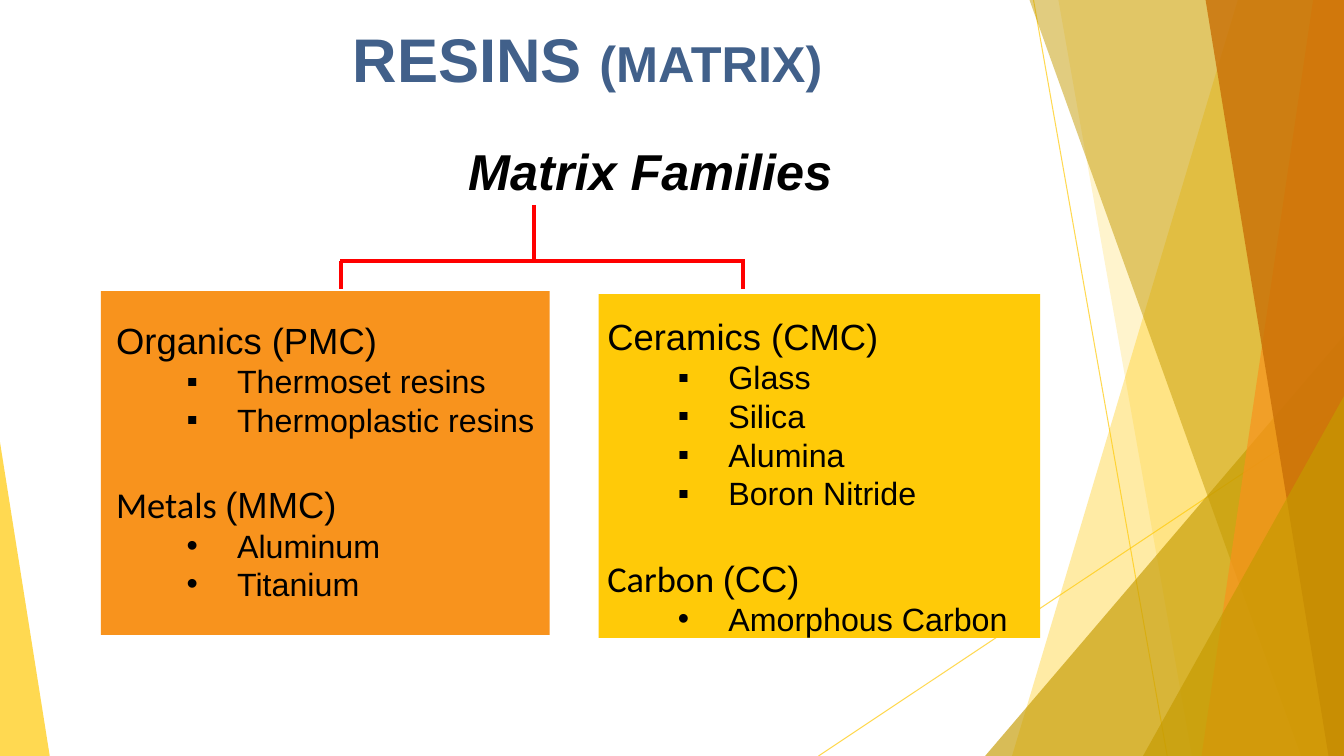
from lxml import etree
from pptx import Presentation
from pptx.dml.color import RGBColor
from pptx.enum.shapes import MSO_CONNECTOR, MSO_SHAPE
from pptx.enum.text import MSO_ANCHOR, MSO_AUTO_SIZE, PP_ALIGN
from pptx.oxml.ns import qn
from pptx.util import Inches, Pt

WIDTH, HEIGHT = Inches(13.33), Inches(7.5)
STRAIGHT = MSO_CONNECTOR.STRAIGHT
RECTANGLE = MSO_SHAPE.RECTANGLE
TRIANGLE = MSO_SHAPE.ISOSCELES_TRIANGLE
TOP, CENTER = MSO_ANCHOR.TOP, PP_ALIGN.CENTER
NO_FIT = MSO_AUTO_SIZE.NONE

YELLOW = RGBColor(0xFF, 0xCA, 0x08)
GOLD = RGBColor(0xC5, 0x9A, 0x00)
ORANGE = RGBColor(0xF8, 0x93, 0x1D)
BROWN = RGBColor(0xC9, 0x6F, 0x06)
RED = RGBColor(0xFF, 0x00, 0x00)
BLUE = RGBColor(0x41, 0x60, 0x8A)
BLACK = RGBColor(0x00, 0x00, 0x00)

HEAD_SIZE, ITEM_SIZE = 26, 23
FAMILY_GAP = Pt(31)

# family, font of its name, abbreviation, bullet, members
LEFT_FAMILIES = [
    ("Organics ", "Arial", "(PMC)", "▪", ["Thermoset resins", "Thermoplastic resins"]),
    ("Metals ", "Calibri", "(MMC)", "•", ["Aluminum", "Titanium"]),
]
RIGHT_FAMILIES = [
    ("Ceramics ", "Arial", "(CMC)", "▪", ["Glass", "Silica", "Alumina", "Boron Nitride"]),
    ("Carbon ", "Calibri", "(CC)", "•", ["Amorphous Carbon"]),
]


def x(percent):
    return round(WIDTH * percent / 100)


def y(percent):
    return round(HEIGHT * percent / 100)


def box(left, top, width, height):
    """Turn percentages of the slide into a position and size."""
    return x(left), y(top), x(width), y(height)


def set_alpha(color_parent, percent):
    color = color_parent.find(".//" + qn("a:srgbClr"))
    etree.SubElement(color, qn("a:alpha")).set("val", str(percent * 1000))


def paint(sp, color, alpha=100):
    sp.shadow.inherit = False
    sp.fill.solid()
    sp.fill.fore_color.rgb = color
    sp.line.fill.background()
    if alpha < 100:
        set_alpha(sp._element.spPr, alpha)


def add_line(slide, start, end, color, width, alpha=100):
    line = slide.shapes.add_connector(
        STRAIGHT, x(start[0]), y(start[1]), x(end[0]), y(end[1]))
    line.line.color.rgb = color
    line.line.width = Pt(width)
    if alpha < 100:
        set_alpha(line._element.spPr, alpha)
    etree.SubElement(line._element.spPr, qn("a:effectLst"))


def add_band(slide, top_x, bottom_x, color, alpha):
    """Fill from a slanted left edge to the right side of the slide."""
    builder = slide.shapes.build_freeform(x(top_x), 0)
    builder.add_line_segments([(WIDTH, 0), (WIDTH, HEIGHT), (x(bottom_x), HEIGHT)])
    paint(builder.convert_to_shape(), color, alpha)


def add_corner(slide, left, top, width, apex, color, alpha):
    """Stand a right triangle on the bottom edge; apex 0 is left, 1 is right."""
    sp = slide.shapes.add_shape(TRIANGLE, *box(left, top, width, 100 - top))
    sp.adjustments[0] = apex
    paint(sp, color, alpha)


def add_run(p, text, size, font="Arial", color=BLACK, bold=False, italic=False):
    r = p.add_run()
    r.text = text
    r.font.size = Pt(size)
    r.font.name = font
    r.font.color.rgb = color
    r.font.bold = bold
    r.font.italic = italic


def set_indent(p, level, left, first):
    p.level = level
    pPr = p._p.get_or_add_pPr()
    pPr.set("marL", str(Inches(left)))
    pPr.set("indent", str(Inches(first)))
    return pPr


def add_bullet(pPr, char):
    color = etree.SubElement(pPr, qn("a:buClr"))
    etree.SubElement(color, qn("a:srgbClr")).set("val", str(BLACK))
    etree.SubElement(pPr, qn("a:buFont")).set("typeface", "Arial")
    etree.SubElement(pPr, qn("a:buChar")).set("char", char)


def add_text_box(slide, left, top, width, height):
    tf = slide.shapes.add_textbox(*box(left, top, width, height)).text_frame
    tf.word_wrap = True
    return tf


def add_families(slide, left, top, families):
    tf = add_text_box(slide, left, top, 35.25, 45.3)
    for i, (name, font, short, bullet, members) in enumerate(families):
        p = tf.add_paragraph() if i else tf.paragraphs[0]
        set_indent(p, 0, 0.3, 0)
        if i:
            p.space_before = FAMILY_GAP
        add_run(p, name, HEAD_SIZE, font)
        add_run(p, short, HEAD_SIZE)
        for member in members:
            p = tf.add_paragraph()
            add_bullet(set_indent(p, 1, 1.5, -0.5), bullet)
            add_run(p, member, ITEM_SIZE)


def add_panel(slide, left, top, width, color):
    paint(slide.shapes.add_shape(RECTANGLE, *box(left, top, width, 45.5)), color)


def add_decoration(slide):
    add_line(slide, (76.9, 0), (86.85, 100), YELLOW, 0.75, 70)
    add_line(slide, (100, 53.7), (60.9, 100), YELLOW, 0.75, 70)
    add_band(slide, 92.1, 75.3, YELLOW, 36)
    add_band(slide, 78.75, 88.7, YELLOW, 20)
    add_corner(slide, 73.3, 44.4, 26.7, 1, GOLD, 66)
    add_band(slide, 76.6, 96.8, GOLD, 50)
    add_band(slide, 97.7, 89.4, ORANGE, 70)
    add_band(slide, 89.7, 98.85, BROWN, 80)
    add_corner(slide, 85.05, 52.4, 14.95, 1, GOLD, 66)
    add_corner(slide, 0, 58.5, 3.7, 0, YELLOW, 70)


def add_tree(slide):
    """Draw the stem, the bar and the two drops of the family tree."""
    bar = 34.5
    add_line(slide, (39.75, 27.1), (39.75, bar), RED, 2.75)
    add_line(slide, (25.3, bar), (55.4, bar), RED, 2.75)
    for drop in (25.4, 55.3):
        add_line(slide, (drop, bar), (drop, 38.2), RED, 3)


def format_title(title):
    title.left, title.top, title.width, title.height = box(11.4, 2.1, 64.65, 15.7)
    tf = title.text_frame
    tf.auto_size = NO_FIT
    tf.vertical_anchor = TOP
    p = tf.paragraphs[0]
    p.alignment = CENTER
    add_run(p, "RESINS ", 44, color=BLUE, bold=True)
    add_run(p, "(MATRIX)", 36, color=BLUE, bold=True)


def main():
    prs = Presentation()
    prs.slide_width, prs.slide_height = WIDTH, HEIGHT
    slide = prs.slides.add_slide(prs.slide_layouts[5])
    format_title(slide.shapes.title)
    add_decoration(slide)
    add_panel(slide, 44.55, 38.9, 32.85, YELLOW)
    add_families(slide, 42.2, 40.9, RIGHT_FAMILIES)
    add_panel(slide, 7.5, 38.5, 33.4, ORANGE)
    add_families(slide, 5.65, 41.4, LEFT_FAMILIES)
    add_tree(slide)
    heading = add_text_box(slide, 34.1, 17.9, 35.25, 11.9)
    add_run(heading.paragraphs[0], "Matrix Families", 36, bold=True, italic=True)
    prs.save("out.pptx")


if __name__ == "__main__":
    main()
